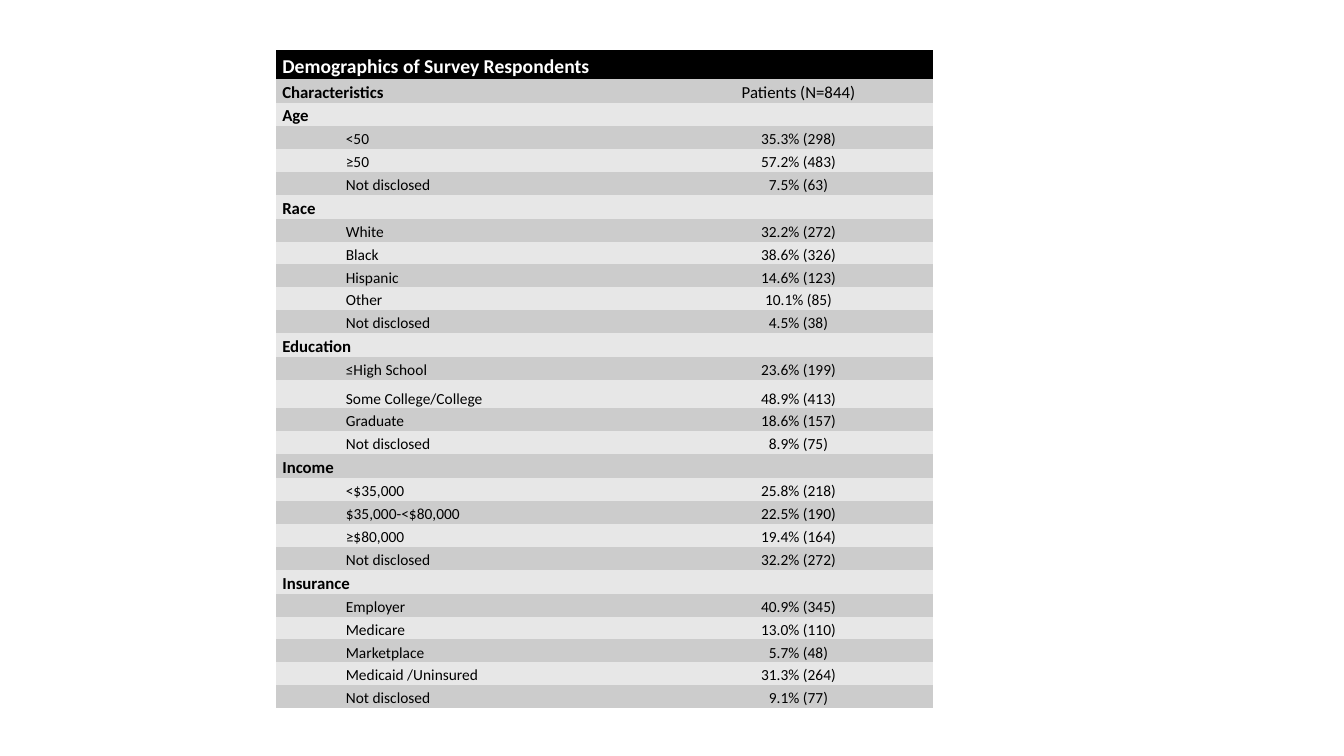
from lxml.etree import SubElement
from pptx import Presentation
from pptx.dml.color import RGBColor
from pptx.enum.text import MSO_ANCHOR, PP_ALIGN
from pptx.oxml.ns import qn
from pptx.util import Inches, Pt

BLACK = RGBColor(0x00, 0x00, 0x00)
WHITE = RGBColor(0xFF, 0xFF, 0xFF)
DARK_BAND = RGBColor(0xCC, 0xCC, 0xCC)
LIGHT_BAND = RGBColor(0xE7, 0xE7, 0xE7)
FONT = "Calibri"
PLAIN_TABLE_STYLE = "{2D5ABB26-0587-4C30-8999-92F81FD0307C}"

COLUMN_WIDTHS = (0.63, 3.22, 2.66)
TABLE_HEIGHT = 6.53
TITLE_HEIGHT = 0.28
SECTION_HEIGHT = 0.24
SPECIAL_HEIGHTS = {"Age": 0.23, "Some College/College": 0.28}

TITLE = "Demographics of Survey Respondents"
HEADINGS = ("Characteristics", "Patients (N=844)")
DEMOGRAPHICS = {
    "Age": [
        ("<50", "35.3% (298)"),
        ("≥50", "57.2% (483)"),
        ("Not disclosed", "7.5% (63)"),
    ],
    "Race": [
        ("White", "32.2% (272)"),
        ("Black", "38.6% (326)"),
        ("Hispanic", "14.6% (123)"),
        ("Other", "10.1% (85)"),
        ("Not disclosed", "4.5% (38)"),
    ],
    "Education": [
        ("≤High School", "23.6% (199)"),
        ("Some College/College", "48.9% (413)"),
        ("Graduate", "18.6% (157)"),
        ("Not disclosed", "8.9% (75)"),
    ],
    "Income": [
        ("<$35,000", "25.8% (218)"),
        ("$35,000-<$80,000", "22.5% (190)"),
        ("≥$80,000", "19.4% (164)"),
        ("Not disclosed", "32.2% (272)"),
    ],
    "Insurance": [
        ("Employer", "40.9% (345)"),
        ("Medicare", "13.0% (110)"),
        ("Marketplace", "5.7% (48)"),
        ("Medicaid /Uninsured", "31.3% (264)"),
        ("Not disclosed", "9.1% (77)"),
    ],
}


def list_rows():
    """Return the three cell texts of every row, from top to bottom."""
    rows = [(TITLE, "", ""), (HEADINGS[0], "", HEADINGS[1])]
    for section, details in DEMOGRAPHICS.items():
        rows.append((section, "", ""))
        rows.extend(("", label, value) for label, value in details)
    return rows


def add_plain_table(slide, row_count):
    frame = slide.shapes.add_table(
        row_count, len(COLUMN_WIDTHS), Inches(2.74), Inches(0.5),
        Inches(sum(COLUMN_WIDTHS)), Inches(TABLE_HEIGHT))
    table = frame.table
    table.first_row = False
    table.horz_banding = False
    for style in frame.element.iter(qn("a:tableStyleId")):
        style.text = PLAIN_TABLE_STYLE
    for column, width in zip(table.columns, COLUMN_WIDTHS):
        column.width = Inches(width)
    return table


def set_row_heights(table, rows):
    # Detail rows share the height that the other rows leave
    heights = [TITLE_HEIGHT]
    for first, label, _ in rows[1:]:
        default = SECTION_HEIGHT if first else None
        heights.append(SPECIAL_HEIGHTS.get(first or label, default))
    fixed = [height for height in heights if height]
    detail_height = (TABLE_HEIGHT - sum(fixed)) / heights.count(None)
    for row, height in zip(table.rows, heights):
        row.height = Inches(height or detail_height)


def format_cell(cell, text, fill, size, bold, color, alignment):
    cell.fill.solid()
    cell.fill.fore_color.rgb = fill
    cell.vertical_anchor = MSO_ANCHOR.BOTTOM
    cell.margin_left = cell.margin_right = Inches(0.06)
    cell.margin_top = cell.margin_bottom = 0
    paragraph = cell.text_frame.paragraphs[0]
    paragraph.text = text
    paragraph.alignment = alignment
    paragraph.line_spacing = 1.07
    for run in paragraph.runs:
        run.font.name = FONT
        run.font.size = Pt(size)
        run.font.bold = bold
        run.font.color.rgb = color
    if not text:
        # Keeps empty cells from stretching their row
        end = SubElement(cell.text_frame.paragraphs[0]._p, qn("a:endParaRPr"))
        end.set("sz", str(size * 100))


def fill_row(table, index, texts):
    is_title = index == 0
    if is_title:
        fill, size, color = BLACK, 14, WHITE
    else:
        fill = DARK_BAND if index % 2 else LIGHT_BAND
        size, color = (12 if texts[0] else 11), BLACK
    for column, text in enumerate(texts):
        alignment = PP_ALIGN.CENTER if column == 2 else PP_ALIGN.LEFT
        format_cell(table.cell(index, column), text, fill, size,
                    column == 0, color, alignment)
    # Titles and section names run across the indent column
    if texts[0] and texts[0] != "Age":
        table.cell(index, 0).merge(table.cell(index, 2 if is_title else 1))


def main():
    presentation = Presentation()
    presentation.slide_width = Inches(13.33)
    presentation.slide_height = Inches(7.5)
    slide = presentation.slides.add_slide(presentation.slide_layouts[6])

    # Demographics table
    rows = list_rows()
    table = add_plain_table(slide, len(rows))
    set_row_heights(table, rows)
    for index, texts in enumerate(rows):
        fill_row(table, index, texts)

    presentation.save("out.pptx")


if __name__ == "__main__":
    main()
